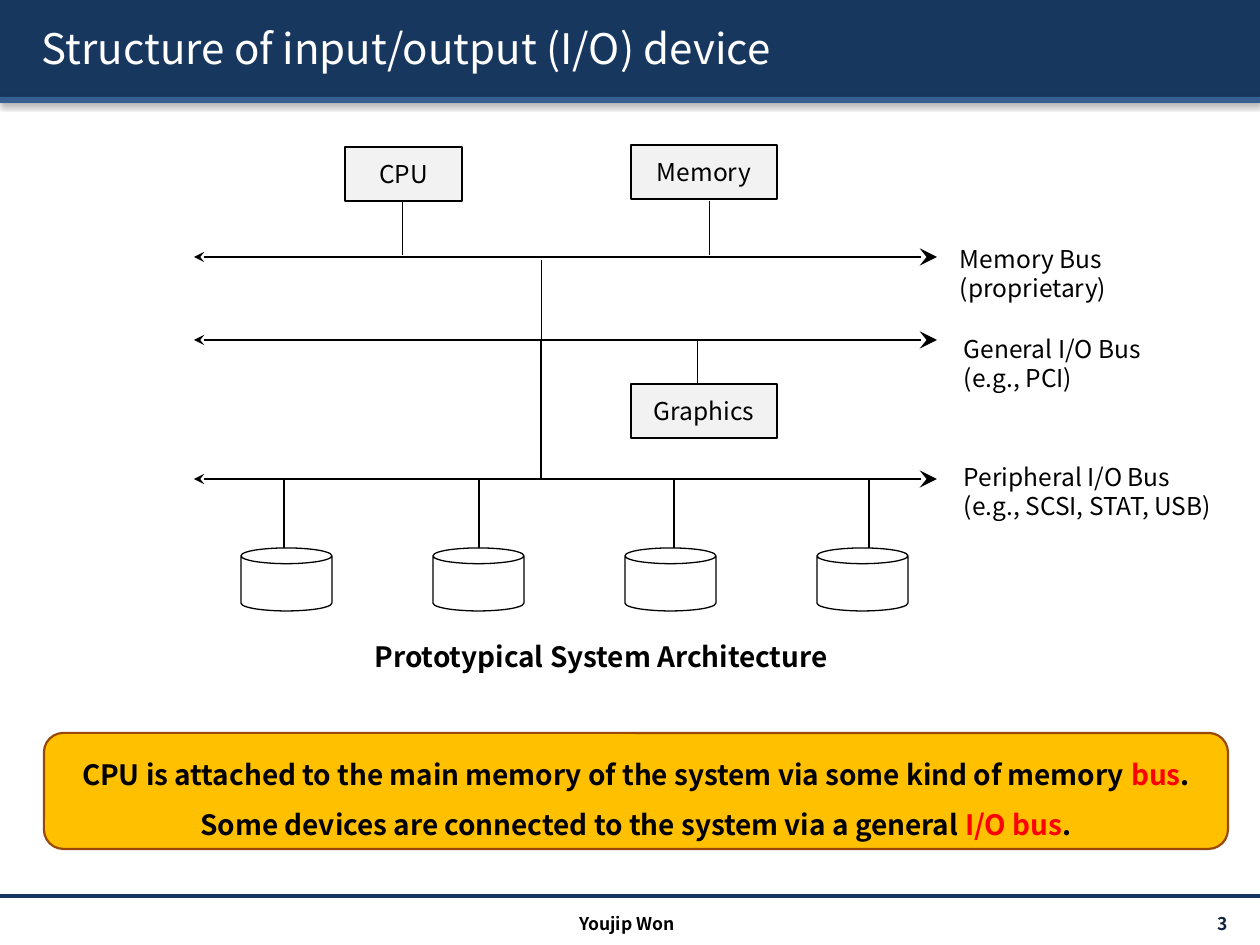
from lxml import etree
from pptx import Presentation
from pptx.dml.color import RGBColor
from pptx.enum.shapes import MSO_CONNECTOR, MSO_SHAPE
from pptx.enum.text import MSO_ANCHOR, PP_ALIGN
from pptx.oxml.ns import qn
from pptx.util import Emu, Pt

LEFT, CENTER, RIGHT = PP_ALIGN.LEFT, PP_ALIGN.CENTER, PP_ALIGN.RIGHT
TOP, MIDDLE = MSO_ANCHOR.TOP, MSO_ANCHOR.MIDDLE
RECTANGLE, CAN, ROUNDED = MSO_SHAPE.RECTANGLE, MSO_SHAPE.CAN, MSO_SHAPE.ROUNDED_RECTANGLE
STRAIGHT = MSO_CONNECTOR.STRAIGHT

SCALE = 914400 / 126
FONT = "Noto Sans CJK KR"
BLACK, WHITE, RED, NAVY, GRAY = "000000", "FFFFFF", "FF0000", "17375E", "F2F2F2"

HEADER_BANDS = [((0, 0, 1260, 97), NAVY), ((0, 97, 1260, 6), "376092")]
BUS_LEFT, BUS_RIGHT = 194, 937
MEMORY_BUS, GENERAL_BUS, PERIPHERAL_BUS = 257, 340, 479
BUSES = [MEMORY_BUS, GENERAL_BUS, PERIPHERAL_BUS]
STEMS = [
    (402, 201, 255, 0.5),
    (709, 201, 255, 0.5),
    (541, 260, GENERAL_BUS, 0.5),
    (541, GENERAL_BUS, PERIPHERAL_BUS, 1),
    (697, GENERAL_BUS, 384, 0.5),
]
COMPONENTS = [
    ("CPU", (345, 147, 117, 54)),
    ("Memory", (631, 145, 146, 54)),
    ("Graphics", (631, 384, 146, 54)),
]
DISK_COUNT, DISK_LEFT, DISK_PITCH, DISK_TOP = 4, 241, 192, 548
DISK_STEM_LEFT, DISK_STEM_PITCH = 284, 195
BUS_LABELS = [
    (["Memory Bus", "(proprietary)"], (947, 238, 202, 72)),
    (["General I/O Bus", "(e.g., PCI)"], (951, 328, 228, 72)),
    (["Peripheral I/O Bus", "(e.g., SCSI, STAT, USB)"], (951, 456, 277, 72)),
]
CALLOUT = [
    [("CPU is attached to the main memory of the system via some kind of memory ", BLACK),
     ("bus", RED), (".", BLACK)],
    [("Some devices are connected to the system via a general ", BLACK),
     ("I/O bus", RED), (".", BLACK)],
]


def px(length):
    """Convert pixels to EMU."""
    return Emu(round(length * SCALE))


def rgb(value):
    """Turn a hex string into a colour."""
    return RGBColor.from_string(value)


def add_shadow(properties, blur, distance, direction, opacity):
    """Append an outer shadow to a new effect list and return the list."""
    effects = etree.SubElement(properties, qn("a:effectLst"))
    shadow = etree.SubElement(effects, qn("a:outerShdw"), blurRad=str(Pt(blur)),
                              dist=str(Pt(distance)), dir=str(direction * 60000),
                              algn="tl", rotWithShape="0")
    color = etree.SubElement(shadow, qn("a:srgbClr"), val=BLACK)
    etree.SubElement(color, qn("a:alpha"), val=str(opacity * 1000))


def write(shape, lines, size, bold=False, align=LEFT, anchor=TOP, spacing=None,
          margins=(13, 6, 13, 6), shadow=False):
    """Fill a shape with lines, each a list of text and colour pairs."""
    frame = shape.text_frame
    sides = ("margin_left", "margin_top", "margin_right", "margin_bottom")
    settings = {"word_wrap": True, "vertical_anchor": anchor}
    settings.update(zip(sides, map(px, margins)))
    for name, value in settings.items():
        setattr(frame, name, value)
    for index, line in enumerate(lines):
        paragraph = frame.add_paragraph() if index else frame.paragraphs[0]
        paragraph.alignment = align
        if spacing:
            paragraph.line_spacing = spacing
        for text, color in line:
            run = paragraph.add_run()
            run.text = text
            run.font.color.rgb = rgb(color)
            if shadow:
                add_shadow(run.font._element, 0, 1.5, 45, 100)
            for name, value in {"size": Pt(size), "bold": bold, "name": FONT}.items():
                setattr(run.font, name, value)


def add_text(slide, box, lines, size, **options):
    """Add a text box."""
    write(slide.shapes.add_textbox(*map(px, box)), lines, size, **options)


def add_box(slide, kind, box, fill, line=None, width=0.75):
    """Add a filled preset shape without a theme shadow."""
    shape = slide.shapes.add_shape(kind, *map(px, box))
    shape.shadow.inherit = False
    shape.fill.solid()
    shape.fill.fore_color.rgb = rgb(fill)
    if line:
        shape.line.color.rgb = rgb(line)
        shape.line.width = Pt(width)
    else:
        shape.line.fill.background()
    return shape


def add_line(slide, start, end, width, color=BLACK, arrows=False):
    """Add a straight line, with an arrowhead at both ends if asked."""
    connector = slide.shapes.add_connector(STRAIGHT, *map(px, start + end))
    connector.line.color.rgb = rgb(color)
    connector.line.width = Pt(width)
    if arrows:
        outline = connector.line._get_or_add_ln()
        for tag, size in (("a:headEnd", "med"), ("a:tailEnd", "lg")):
            etree.SubElement(outline, qn(tag), type="stealth", w=size, len=size)
    etree.SubElement(connector._element.spPr, qn("a:effectLst"))


def main():
    """Build the slide."""
    presentation = Presentation()
    presentation.slide_width, presentation.slide_height = px(1260), px(945)
    slide = presentation.slides.add_slide(presentation.slide_layouts[6])

    for box, color in HEADER_BANDS:
        band = add_box(slide, RECTANGLE, box, color)
        properties = band._element.spPr
        properties.remove(properties.find(qn("a:effectLst")))
        add_shadow(properties, 3.1, 1.6, 90, 38)
    add_line(slide, (0, 896), (1260, 896), 2, NAVY)
    add_text(slide, (29, 8, 1211, 80), [[("Structure of input/output (I/O) device", WHITE)]],
             24, anchor=MIDDLE, shadow=True)
    add_text(slide, (1097, 908, 144, 30), [[("3", "0F243E")]], 10,
             bold=True, align=RIGHT, anchor=MIDDLE)
    add_text(slide, (418, 907, 418, 30), [[("Youjip Won", BLACK)]], 10,
             bold=True, align=CENTER)

    for y in BUSES:
        add_line(slide, (BUS_LEFT, y), (BUS_RIGHT, y), 1.5, arrows=True)
    for x, top, bottom, width in STEMS:
        add_line(slide, (x, top), (x, bottom), width)
    for name, box in COMPONENTS:
        component = add_box(slide, RECTANGLE, box, GRAY, BLACK)
        write(component, [[(name, BLACK)]], 14, align=CENTER, anchor=MIDDLE,
              margins=(0, 6, 0, 6))
    for index in range(DISK_COUNT):
        disk_box = (DISK_LEFT + index * DISK_PITCH, DISK_TOP, 91, 63)
        add_box(slide, CAN, disk_box, WHITE, BLACK)
        x = DISK_STEM_LEFT + index * DISK_STEM_PITCH
        add_line(slide, (x, PERIPHERAL_BUS), (x, DISK_TOP), 1)

    for lines, box in BUS_LABELS:
        add_text(slide, box, [[(line, BLACK)] for line in lines], 14)
    add_text(slide, (362, 634, 489, 47), [[("Prototypical System Architecture", BLACK)]],
             16, bold=True)
    callout = add_box(slide, ROUNDED, (44, 733, 1184, 116), "FFC000", "984807", 1.25)
    write(callout, CALLOUT, 16, bold=True, align=CENTER, anchor=MIDDLE, spacing=1.5,
          margins=(15, 6, 15, 6))
    presentation.save("out.pptx")


if __name__ == "__main__":
    main()
